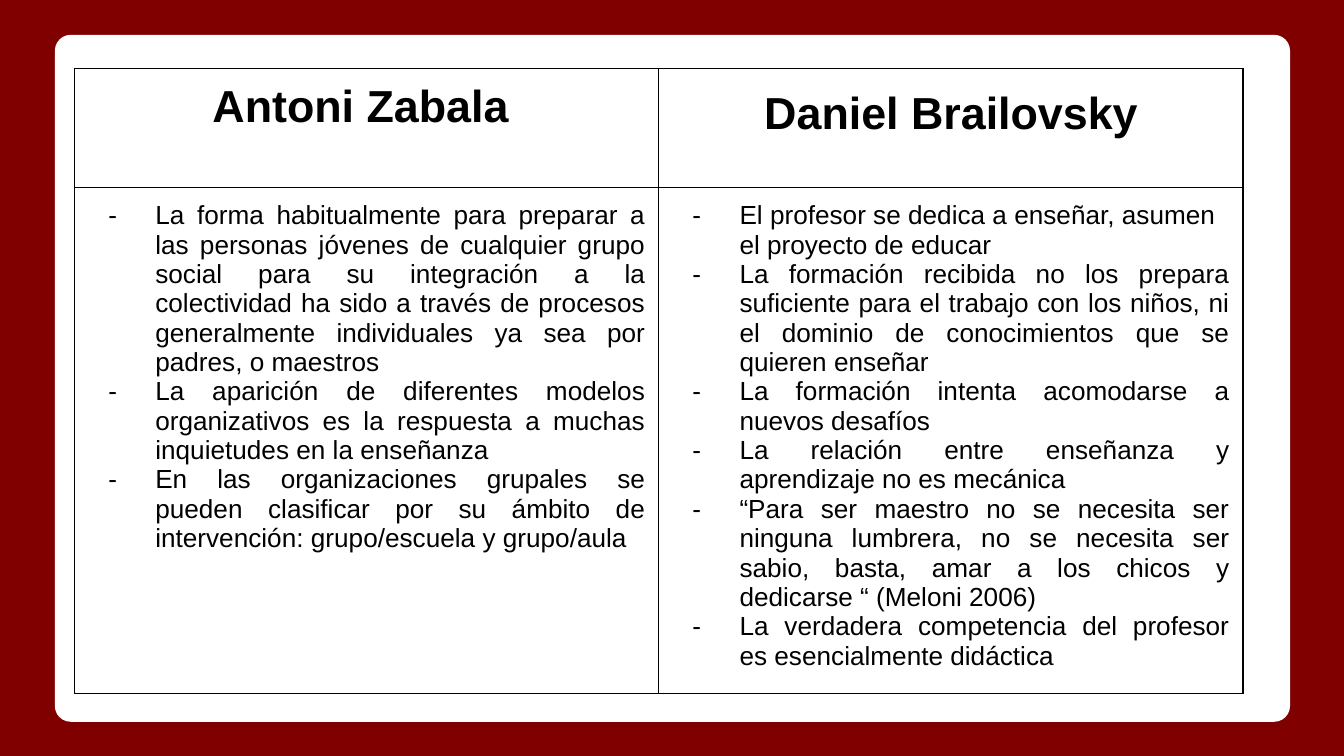
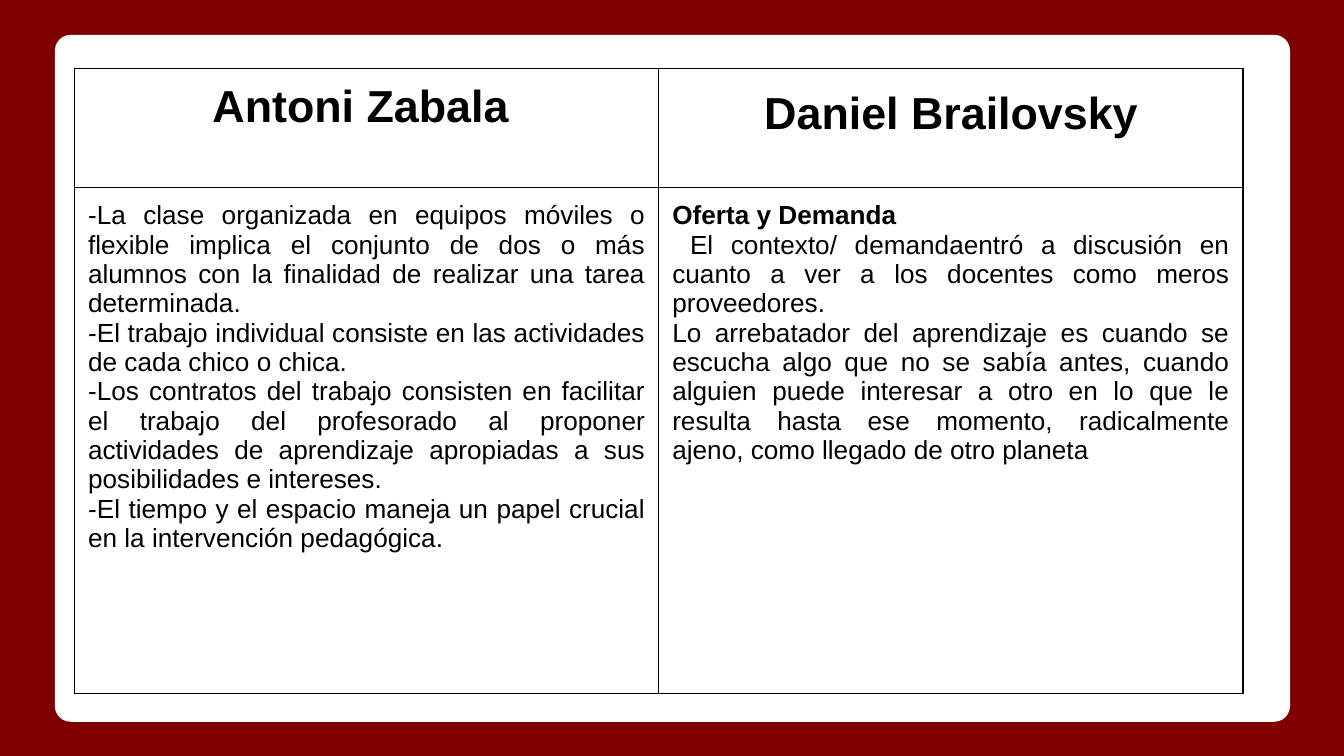
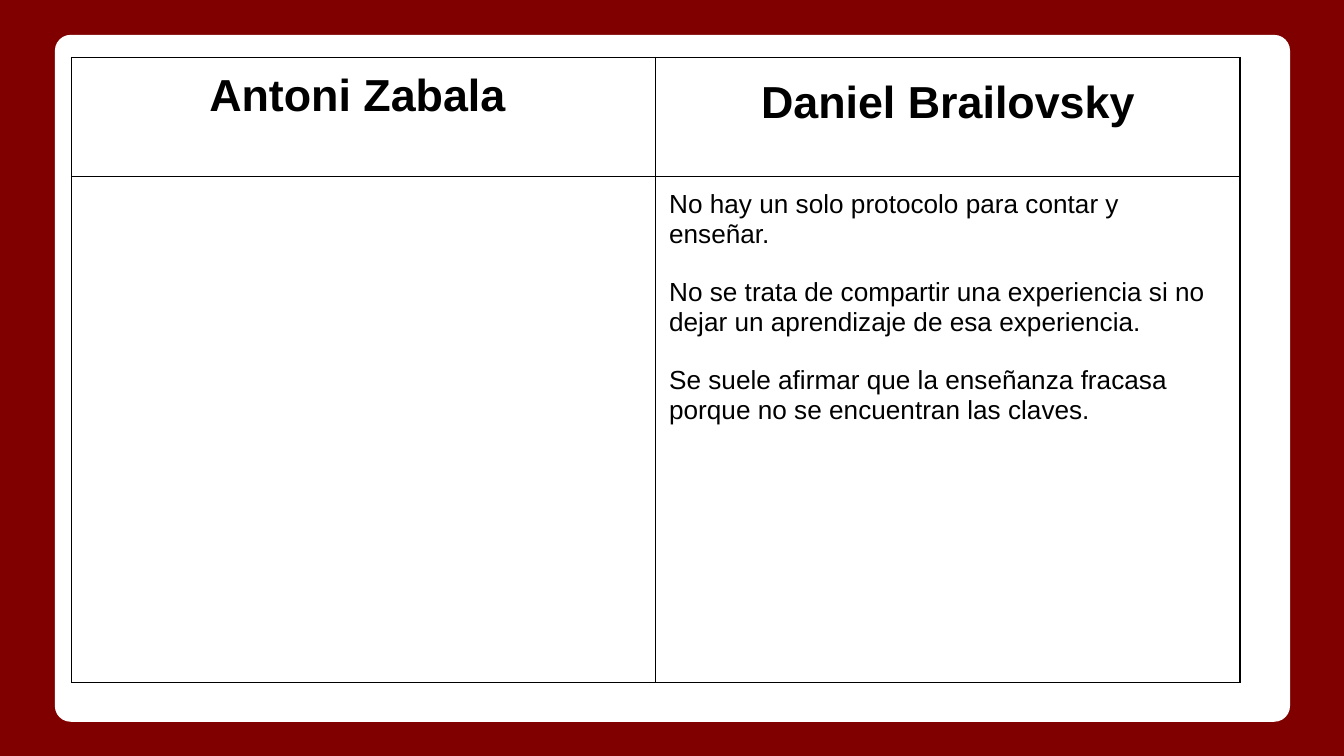
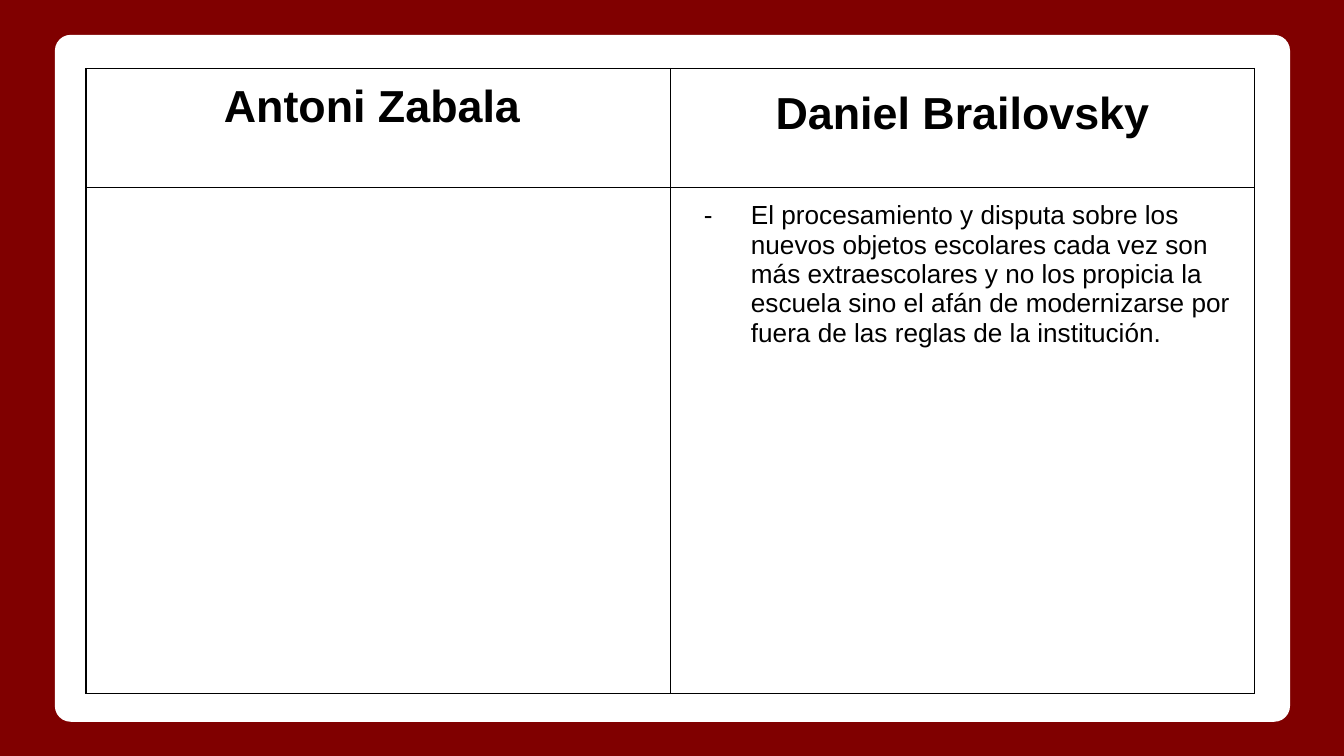
from lxml import etree
from pptx import Presentation
from pptx import util as u
from pptx.dml.color import RGBColor
from pptx.enum import shapes, text
from pptx.oxml.ns import qn

Pt = u.Pt
COLORS = {"background": "800000", "panel": "FFFFFF", "ink": "000000"}
FONT = "Arial"
COLUMN_WIDTH = 313
ROW_HEIGHTS = (63.75, 271)
ALIGNMENTS = {
    "left": text.PP_ALIGN.LEFT,
    "center": text.PP_ALIGN.CENTER,
    "justify": text.PP_ALIGN.JUSTIFY,
}


def color(name):
    return RGBColor.from_string(COLORS[name])


def add_child(parent, tag, **attributes):
    child = etree.SubElement(parent, qn(tag))
    for name, value in attributes.items():
        child.set(name, str(value))
    return child


def set_dash(properties):
    properties.set("marL", str(Pt(36)))
    properties.set("indent", str(Pt(-25.2)))
    add_child(add_child(properties, "a:buClr"), "a:srgbClr", val=COLORS["ink"])
    add_child(properties, "a:buFont", typeface=FONT)
    add_child(properties, "a:buChar", char="-")


def write(paragraph, words, size=14, bold=False, align="justify", dash=False,
          first_indent=0, before=0, spacing=None):
    properties = paragraph._p.get_or_add_pPr()
    if dash:
        set_dash(properties)
    elif first_indent:
        properties.set("indent", str(Pt(first_indent)))
    paragraph.alignment = ALIGNMENTS[align]
    if before:
        paragraph.space_before = Pt(before)
    if spacing:
        paragraph.line_spacing = spacing
    run = paragraph.add_run()
    run.text = words
    run.font.name = FONT
    run.font.size = Pt(size)
    run.font.bold = bold
    run.font.color.rgb = color("ink")


def fill_cell(cell, entries, side_margin=7.2):
    cell.margin_left = cell.margin_right = Pt(side_margin)
    cell.margin_top = cell.margin_bottom = Pt(7.2)
    cell_properties = cell._tc.get_or_add_tcPr()
    for edge in ("a:lnL", "a:lnR", "a:lnT", "a:lnB"):
        line = add_child(cell_properties, edge, w=Pt(0.75))
        add_child(add_child(line, "a:solidFill"), "a:srgbClr", val=COLORS["ink"])
    cell.fill.background()
    frame = cell.text_frame
    for index, (words, style) in enumerate(entries):
        paragraph = frame.add_paragraph() if index else frame.paragraphs[0]
        write(paragraph, words, **style)


def add_comparison(slide, left, top, zabala, brailovsky):
    frame = slide.shapes.add_table(2, 2, Pt(left), Pt(top),
                                   Pt(2 * COLUMN_WIDTH), Pt(sum(ROW_HEIGHTS)))
    table = frame.table
    table.first_row = table.horz_banding = False
    for column in table.columns:
        column.width = Pt(COLUMN_WIDTH)
    for row, height in zip(table.rows, ROW_HEIGHTS):
        row.height = Pt(height)
    heading = dict(size=24, bold=True, align="center")
    fill_cell(table.cell(0, 0), [("Antoni Zabala ", heading)])
    fill_cell(table.cell(0, 1), [("Daniel Brailovsky", dict(heading, spacing=1.15))],
              side_margin=5)
    fill_cell(table.cell(1, 0), zabala)
    fill_cell(table.cell(1, 1), brailovsky)


def add_layout_panel(slide):
    panel = slide.shapes.add_shape(shapes.MSO_SHAPE.ROUNDED_RECTANGLE,
                                   Pt(29.4), Pt(18.7), Pt(661.7), Pt(368))
    panel.adjustments[0] = 0.023
    panel.shadow.inherit = False
    panel.fill.solid()
    panel.fill.fore_color.rgb = color("panel")
    panel.line.fill.background()
    slide.slide_layout.shapes.element.append(panel.element)


def styled(*lines, **style):
    return [(line, style) for line in lines]


def main():
    presentation = Presentation()
    presentation.slide_width, presentation.slide_height = Pt(720), Pt(405)
    background = presentation.slide_master.background.fill
    background.solid()
    background.fore_color.rgb = color("background")
    layout = presentation.slide_layouts[6]

    comparisons = [
        (40, 36.7,
         styled(
             "La forma habitualmente para preparar a las personas jóvenes de cualquier grupo social para su integración a la colectividad ha sido a través de procesos generalmente individuales ya sea por padres, o maestros",
             "La aparición de diferentes modelos organizativos es la respuesta a muchas inquietudes en la enseñanza",
             "En las organizaciones grupales se pueden clasificar por su ámbito de intervención: grupo/escuela y grupo/aula",
             dash=True),
         styled("El profesor se dedica a enseñar, asumen el proyecto de educar",
                dash=True, align="left")
         + styled(
             "La formación recibida no los prepara suficiente para el trabajo con los niños, ni el dominio de conocimientos que se quieren enseñar",
             "La formación intenta acomodarse a nuevos desafíos",
             "La relación entre enseñanza y aprendizaje no es mecánica",
             "“Para ser maestro no se necesita ser ninguna lumbrera, no se necesita ser sabio, basta, amar a los chicos y dedicarse “ (Meloni 2006)",
             "La verdadera competencia del profesor es esencialmente didáctica",
             dash=True)),
        (40, 36.7,
         styled(
             "-La clase organizada en equipos móviles o flexible implica el conjunto de dos o más alumnos con la finalidad de realizar una tarea determinada.",
             "-El trabajo individual consiste en las actividades de cada chico o chica.",
             "-Los contratos del trabajo consisten en facilitar el trabajo del profesorado al proponer actividades de aprendizaje apropiadas a sus posibilidades e intereses.",
             "-El tiempo y el espacio maneja un papel crucial en la intervención pedagógica."),
         styled("Oferta y Demanda", bold=True)
         + styled("El contexto/ demandaentró a discusión en cuanto a ver a los docentes como meros proveedores.",
                  first_indent=9.5)
         + styled("Lo arrebatador del aprendizaje es cuando se escucha algo que no se sabía antes, cuando alguien puede interesar a otro en lo que le resulta hasta ese momento, radicalmente ajeno, como llegado de otro planeta")),
        (38.3, 30.8, [],
         styled("No hay un solo protocolo para contar y enseñar.", align="left")
         + styled(
             "No se trata de compartir una experiencia si no dejar un aprendizaje de esa experiencia.",
             "Se suele afirmar que la enseñanza fracasa porque no se encuentran las claves.",
             align="left", before=15.75)),
        (46.1, 36.7, [],
         styled("El procesamiento y disputa sobre los nuevos objetos escolares cada vez son más extraescolares y no los propicia la escuela sino el afán de modernizarse por fuera de las reglas de la institución.",
                dash=True, align="left")),
    ]
    for index, comparison in enumerate(comparisons):
        slide = presentation.slides.add_slide(layout)
        if index == 0:
            add_layout_panel(slide)
        add_comparison(slide, *comparison)

    presentation.save("out.pptx")


if __name__ == "__main__":
    main()
